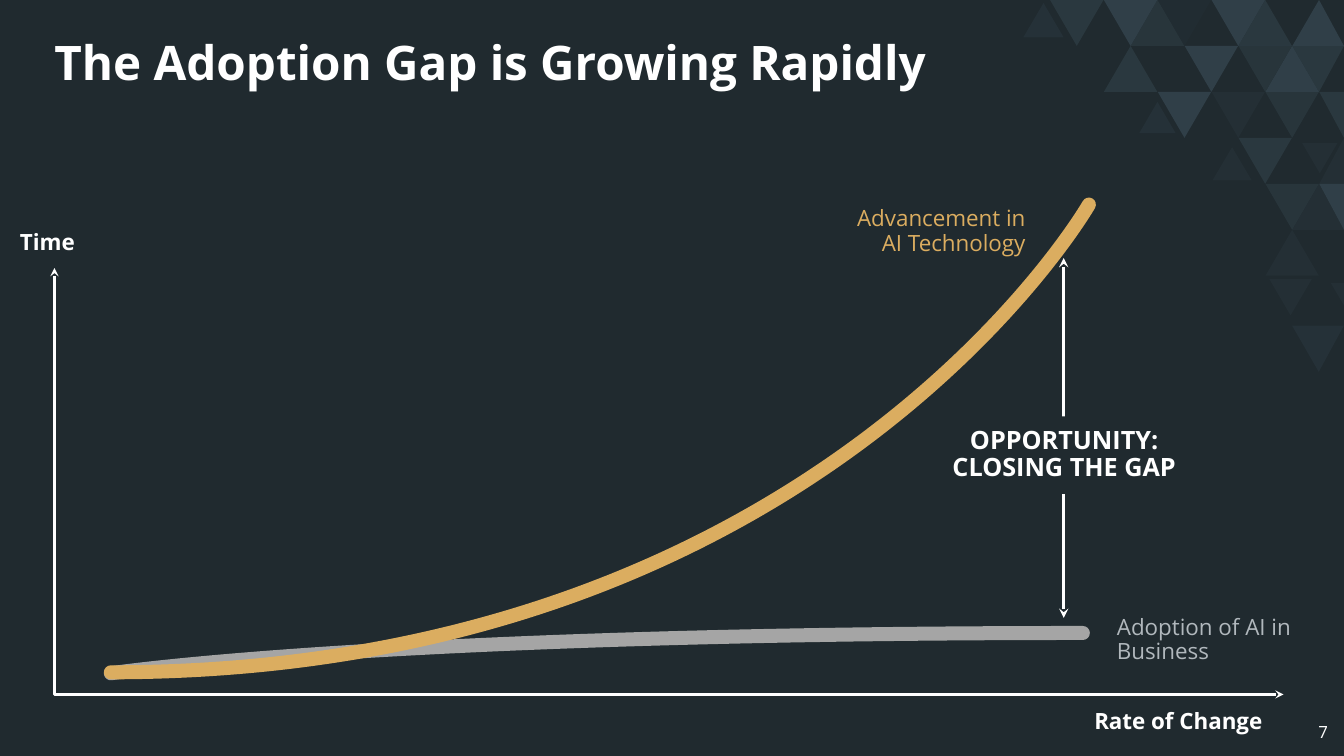
from lxml.etree import SubElement
from pptx import Presentation
from pptx.dml.color import RGBColor
from pptx.enum.shapes import MSO_CONNECTOR, MSO_SHAPE
from pptx.enum.text import MSO_ANCHOR, PP_ALIGN
from pptx.oxml.ns import qn
from pptx.util import Inches, Pt

FONT = "Open Sans"
COLORS = {
    "back": "202A2F", "white": "FFFFFF", "gold": "DBAD60", "gray": "A5A5A5",
    "label": "B1B8BD", "slate": "303F48", "teal": "49636F",
}
SLIDE_W, SLIDE_H = 13.33, 7.5
TITLE = "The Adoption Gap is Growing Rapidly"
LEFT, CENTER, RIGHT = PP_ALIGN.LEFT, PP_ALIGN.CENTER, PP_ALIGN.RIGHT

# Mosaic cells: row -> (column, colour, opacity %)
MOSAIC = {
    0: [(0, "teal", 25), (2, "slate", 100), (3, "teal", 20), (4, "slate", 12),
        (6, "slate", 100), (7, "teal", 25), (9, "slate", 100)],
    1: [(2, "teal", 25), (5, "slate", 100), (7, "teal", 20), (8, "slate", 100),
        (9, "teal", 25)],
    2: [(4, "slate", 100), (6, "slate", 25), (8, "teal", 20), (10, "teal", 25)],
    3: [(7, "teal", 25), (10, "slate", 25)],
    4: [(8, "teal", 20), (9, "slate", 25), (10, "slate", 100)],
    5: [(8, "slate", 25)],
}
MOSAIC_X, COL_STEP, ROW_STEP, CELL_W = 10.68, 0.267, 0.456, 0.53
# Loose triangles: centre, top, width, height, points down, opacity %
LOOSE = [
    (10.35, 0.03, 0.4, 0.34, False, 36),
    (11.48, 1.01, 0.36, 0.31, False, 36),
    (12.22, 1.46, 0.39, 0.33, False, 25),
    (13.09, 1.42, 0.35, 0.3, True, 25),
    (12.8, 2.77, 0.42, 0.36, True, 25),
    (13.33, 2.81, 0.26, 0.22, True, 25),
    (13.08, 3.23, 0.53, 0.46, True, 36),
]

AXES = [(0.54, 2.66), (0.54, 6.89), (12.73, 6.89)]
# Curves: colour, then start, two control points and end
CURVES = [
    ("gray", [(1.1, 6.68), (1.1, 6.68), (3.74, 6.28), (10.74, 6.28)]),
    ("gold", [(10.8, 2.03), (10.8, 2.03), (8.14, 6.67), (1.1, 6.67)]),
]
GAP_X, GAP_TOP, GAP_BOTTOM = 10.55, 2.56, 6.13
GAP_TEXT, GAP_BOX = "OPPORTUNITY: CLOSING THE GAP", (9.07, 4.13, 2.97, 0.77)
# Labels: text, box, size, colour, bold, alignment, line spacing
LABELS = [
    ("Adoption of AI in Business", (10.98, 6.1, 1.94, 0.5), 16, "label", False, LEFT, 0.9),
    ("Advancement in AI Technology", (8.33, 2.05, 1.94, 0.5), 16, "gold", False, RIGHT, 0.9),
    ("Rate of Change", (10.41, 6.95, 2.21, 0.4), 16, "white", True, RIGHT, 1.0),
    ("Time", (0, 2.2, 0.84, 0.4), 16, "white", True, RIGHT, 1.0),
    ("7", (10.27, 7.06, 3, 0.4), 12, "white", False, RIGHT, 1.0),
]


def rgb(name):
    return RGBColor.from_string(COLORS[name])


def outline(points, close):
    pts = [(Inches(x), Inches(y)) for x, y in points]
    builder = s.shapes.build_freeform(*pts[0])
    builder.add_line_segments(pts[1:], close=close)
    sp = builder.convert_to_shape()
    sp.shadow.inherit = False
    return sp


def triangle(center, top, width, height, down, color, opacity):
    """Draw one triangle, cut at the right edge of the slide."""
    base, tip = (top, top + height) if down else (top + height, top)
    corners = [(center - width / 2, base), (center, tip), (center + width / 2, base)]
    sp = outline([(min(x, SLIDE_W), y) for x, y in corners], True)
    sp.fill.solid()
    sp.fill.fore_color.rgb = rgb(color)
    sp.line.fill.background()
    if opacity < 100:
        clr = sp.fill._xPr.find(".//" + qn("a:srgbClr"))
        SubElement(clr, qn("a:alpha")).set("val", str(opacity * 1000))


def stroke(shape, color, width):
    shape.line.color.rgb = rgb(color)
    shape.line.width = Pt(width)


def add_arrowheads(shape):
    ln = shape.line._get_or_add_ln()
    for end in ("a:headEnd", "a:tailEnd"):
        SubElement(ln, qn(end)).set("type", "stealth")


def curve(color, points):
    sp = outline(points, False)
    sp.fill.background()
    stroke(sp, color, 10)
    sp.line._get_or_add_ln().set("cap", "rnd")
    # Join the three straight segments into one Bézier segment
    track = sp._element.xpath(".//a:path")[0]
    segments = track.findall(qn("a:lnTo"))
    bezier = SubElement(track, qn("a:cubicBezTo"))
    for segment in segments:
        bezier.append(segment[0])
        track.remove(segment)


def write(shape, text, size, color, bold, align, spacing, anchor=MSO_ANCHOR.MIDDLE):
    tf = shape.text_frame
    tf.text = text
    tf.word_wrap = True
    tf.vertical_anchor = anchor
    p = tf.paragraphs[0]
    p.alignment, p.line_spacing = align, spacing
    font = p.runs[0].font
    font.name, font.size, font.bold = FONT, Pt(size), bold
    font.color.rgb = rgb(color)


def place(shape, box):
    shape.left, shape.top, shape.width, shape.height = map(Inches, box)


prs = Presentation()
prs.slide_width, prs.slide_height = Inches(SLIDE_W), Inches(SLIDE_H)
s = prs.slides.add_slide(prs.slide_layouts[5])
s.background.fill.solid()
s.background.fill.fore_color.rgb = rgb("back")

for row, cells in MOSAIC.items():
    for col, color, opacity in cells:
        triangle(MOSAIC_X + col * COL_STEP, row * ROW_STEP, CELL_W, ROW_STEP,
                 (row + col) % 2 == 0, color, opacity)
for *geometry, opacity in LOOSE:
    triangle(*geometry, "slate", opacity)

title = s.shapes.title
place(title, (0.54, 0.34, 9.72, 0.98))
write(title, TITLE, 34, "white", True, LEFT, 0.9, MSO_ANCHOR.TOP)
title.text_frame.margin_left = 0

axes = outline(AXES, False)
axes.fill.background()
stroke(axes, "white", 1.5)
add_arrowheads(axes)
for color, points in CURVES:
    curve(color, points)

gap = s.shapes.add_connector(MSO_CONNECTOR.STRAIGHT, Inches(GAP_X), Inches(GAP_TOP),
                             Inches(GAP_X), Inches(GAP_BOTTOM))
stroke(gap, "white", 2.25)
add_arrowheads(gap)
SubElement(gap._element.spPr, qn("a:effectLst"))

banner = s.shapes.add_shape(MSO_SHAPE.RECTANGLE, *map(Inches, GAP_BOX))
banner.shadow.inherit = False
banner.fill.solid()
banner.fill.fore_color.rgb = rgb("back")
banner.line.fill.background()
write(banner, GAP_TEXT, 18, "white", True, CENTER, 0.9)

for text, box, *style in LABELS:
    write(s.shapes.add_textbox(*map(Inches, box)), text, *style)

prs.save("out.pptx")
